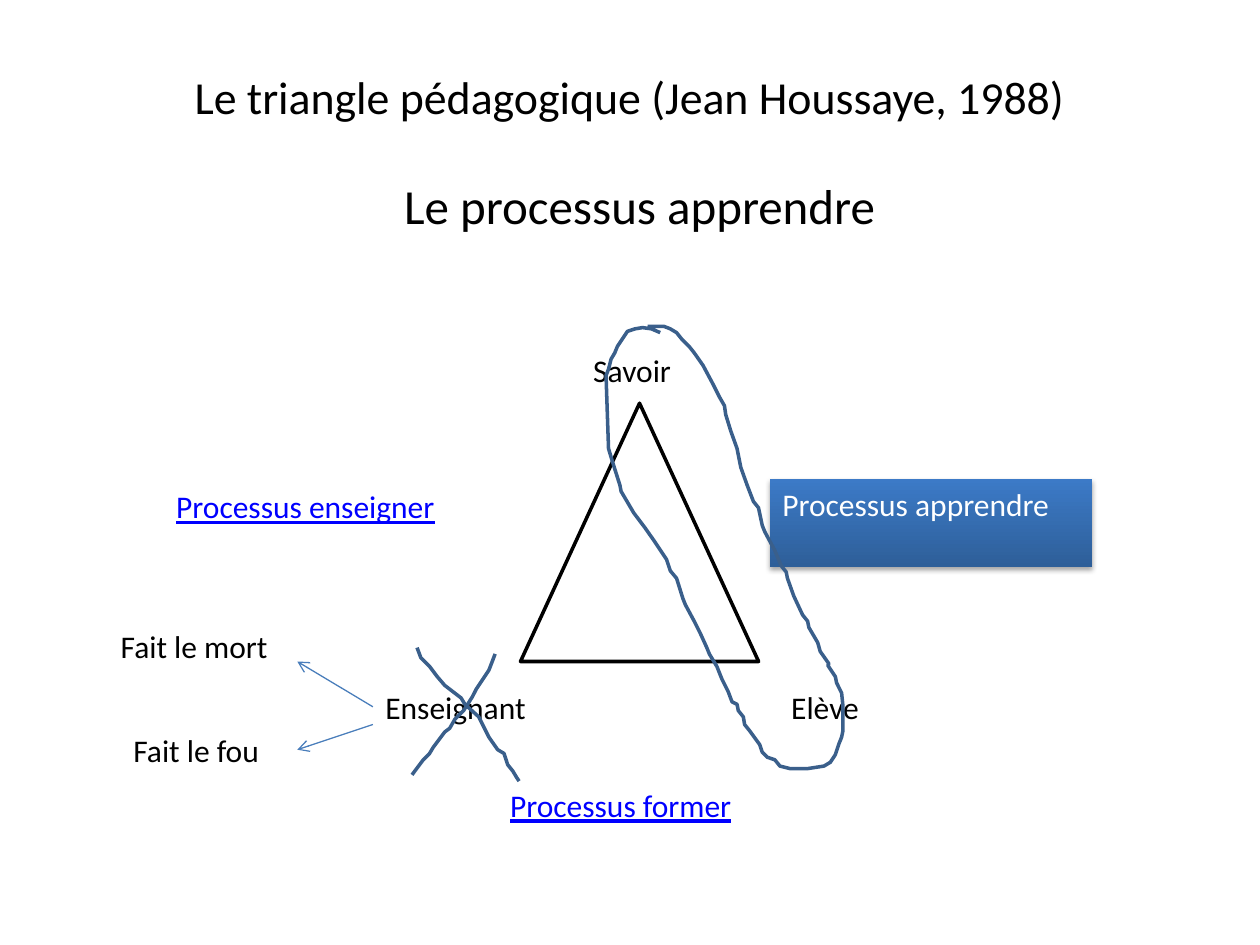
from lxml.etree import SubElement
from pptx import Presentation
from pptx.dml.color import RGBColor
from pptx.enum.shapes import MSO_CONNECTOR as LINK, MSO_SHAPE as SHAPE
from pptx.enum.text import MSO_ANCHOR as ANCHOR, PP_ALIGN as ALIGN
from pptx.oxml.ns import qn
from pptx.util import Pt

BLACK = RGBColor(0, 0, 0)
WHITE = RGBColor(255, 255, 255)
BLUE = RGBColor(0, 0, 255)
INK = RGBColor(0x3A, 0x5F, 0x8B)
ARROW = RGBColor(0x4A, 0x7E, 0xBB)
DARK = RGBColor(0x2E, 0x5F, 0x99)
LIGHT = RGBColor(0x3C, 0x7A, 0xC7)

TITLE = "Le triangle pédagogique (Jean Houssaye, 1988)"
HEAD = "Le processus apprendre"
FOCUS = "Processus apprendre"

# text, left, top, width, in points
LABELS = [
    ("Savoir", 331.9, 197.3, 102.2),
    ("Enseignant", 213.1, 389.5, 147.6),
    ("Elève", 445, 389.5, 118.8),
    ("Fait le mort", 61.9, 355, 116.6),
    ("Fait le fou", 69.1, 414, 102.2),
]
OTHERS = [
    ("Processus enseigner", 93.6, 275, 198),
    ("Processus former", 284.4, 445.7, 169.2),
]
ARROWS = [(213.1, 403.9, 169.9, 378), (213.1, 414, 169.9, 428.4)]

# Hand-drawn strokes, on a grid of 0.72 points
GRID = Pt(0.72)
LOOP = [
    (524, 264), (517, 261), (510, 260), (504, 261), (498, 263), (490, 275),
    (488, 280), (485, 285), (483, 293), (481, 298), (482, 327), (483, 356),
    (486, 366), (492, 385), (493, 390), (503, 407), (512, 419), (519, 429),
    (529, 444), (532, 453), (537, 459), (542, 475), (544, 480), (551, 493),
    (556, 503), (561, 514), (563, 519), (569, 529), (573, 539), (578, 549),
    (581, 557), (585, 559), (586, 564), (590, 569), (591, 575), (595, 580),
    (603, 591), (605, 597), (609, 601), (615, 603), (619, 608), (627, 610),
    (641, 610), (654, 608), (659, 605), (663, 599), (666, 590), (668, 585),
    (669, 580), (669, 560), (668, 550), (664, 542), (663, 537), (657, 528),
    (658, 527), (651, 517), (649, 510), (642, 498), (641, 493), (637, 488),
    (630, 473), (625, 459), (624, 454), (620, 449), (615, 437), (607, 422),
    (605, 417), (602, 403), (598, 398), (593, 385), (588, 371), (586, 361),
    (585, 356), (580, 342), (576, 329), (575, 322), (571, 315), (566, 305),
    (558, 290), (551, 280), (547, 275), (541, 269), (537, 264), (532, 261),
    (527, 259), (514, 259),
]
CROSS_UP = [
    (393, 519), (390, 527), (388, 532), (378, 547), (375, 553), (368, 564),
    (361, 571), (357, 578), (353, 581), (344, 593), (341, 598), (336, 603),
    (327, 615),
]
CROSS_DOWN = [
    (331, 514), (334, 522), (341, 529), (347, 537), (353, 544), (366, 554),
    (369, 559), (380, 569), (388, 585), (395, 595), (400, 598), (403, 607),
    (407, 612), (410, 617), (412, 620),
]


def write(frame, text, size=18, color=BLACK, align=ALIGN.LEFT, under=None):
    frame.word_wrap = True
    frame.vertical_anchor = ANCHOR.TOP
    par = frame.paragraphs[0]
    par.text = text
    par.alignment = align
    font = par.runs[0].font
    font.name, font.size, font.underline = "Calibri", Pt(size), under
    font.color.rgb = color


def no_inset(frame):
    frame.margin_left = frame.margin_right = 0
    frame.margin_top = frame.margin_bottom = 0


def label(shapes, text, left, top, width, **style):
    box = shapes.add_textbox(Pt(left), Pt(top), Pt(width), Pt(28.8))
    write(box.text_frame, text, **style)


def stroke(shapes, points):
    pen = shapes.build_freeform(*points[0], scale=GRID)
    pen.add_line_segments(points[1:], close=False)
    shape = pen.convert_to_shape()
    shape.shadow.inherit = False
    shape.fill.background()
    shape.line.color.rgb = INK
    shape.line.width = Pt(2)


def arrow(shapes, ends):
    link = shapes.add_connector(LINK.STRAIGHT, *map(Pt, ends))
    link.line.color.rgb = ARROW
    link.line.width = Pt(0.75)
    SubElement(link.line._get_or_add_ln(), qn("a:tailEnd"), type="arrow")
    SubElement(link._element.spPr, qn("a:effectLst"))


def focus(shapes):
    """Draw the raised box of the process in question."""
    box = shapes.add_shape(SHAPE.RECTANGLE, Pt(440), Pt(273.6), Pt(184.3), Pt(50.4))
    box.fill.gradient()
    box.fill.gradient_angle = 90
    for stop, color in zip(box.fill.gradient_stops, (DARK, LIGHT)):
        stop.color.rgb = color
    box.line.fill.background()
    box.shadow.inherit = False
    effects = box._element.spPr.find(qn("a:effectLst"))
    shade = SubElement(effects, qn("a:outerShdw"), blurRad=str(Pt(3.1)),
                       dist=str(Pt(1.8)), dir="5400000", rotWithShape="0")
    tone = SubElement(shade, qn("a:srgbClr"), val=str(BLACK))
    SubElement(tone, qn("a:alpha"), val="35000")
    write(box.text_frame, FOCUS, color=WHITE)


def main():
    deck = Presentation()
    deck.slide_width, deck.slide_height = Pt(720), Pt(540)
    shapes = deck.slides.add_slide(deck.slide_layouts[5]).shapes

    title = shapes.title
    title.left, title.top, title.width, title.height = map(Pt, (36, 21.6, 647.3, 67))
    write(title.text_frame, TITLE, 26.2, align=ALIGN.CENTER)
    title.text_frame.vertical_anchor = ANCHOR.MIDDLE
    no_inset(title.text_frame)

    tri = shapes.add_shape(SHAPE.ISOSCELES_TRIANGLE,
                           Pt(297.4), Pt(230.4), Pt(136.1), Pt(147.6))
    tri.shadow.inherit = False
    tri.fill.solid()
    tri.fill.fore_color.rgb = WHITE
    tri.line.color.rgb = BLACK
    tri.line.width = Pt(2)

    head = shapes.add_textbox(Pt(31), Pt(100), Pt(668.9), Pt(402.5)).text_frame
    write(head, HEAD, 28, align=ALIGN.CENTER)
    head.paragraphs[0].space_before = Pt(5.6)
    no_inset(head)

    for item in LABELS:
        label(shapes, *item)
    focus(shapes)
    for item in OTHERS:
        label(shapes, *item, color=BLUE, under=True)
    for points in (LOOP, CROSS_UP, CROSS_DOWN):
        stroke(shapes, points)
    for ends in ARROWS:
        arrow(shapes, ends)

    deck.save("out.pptx")


if __name__ == "__main__":
    main()
